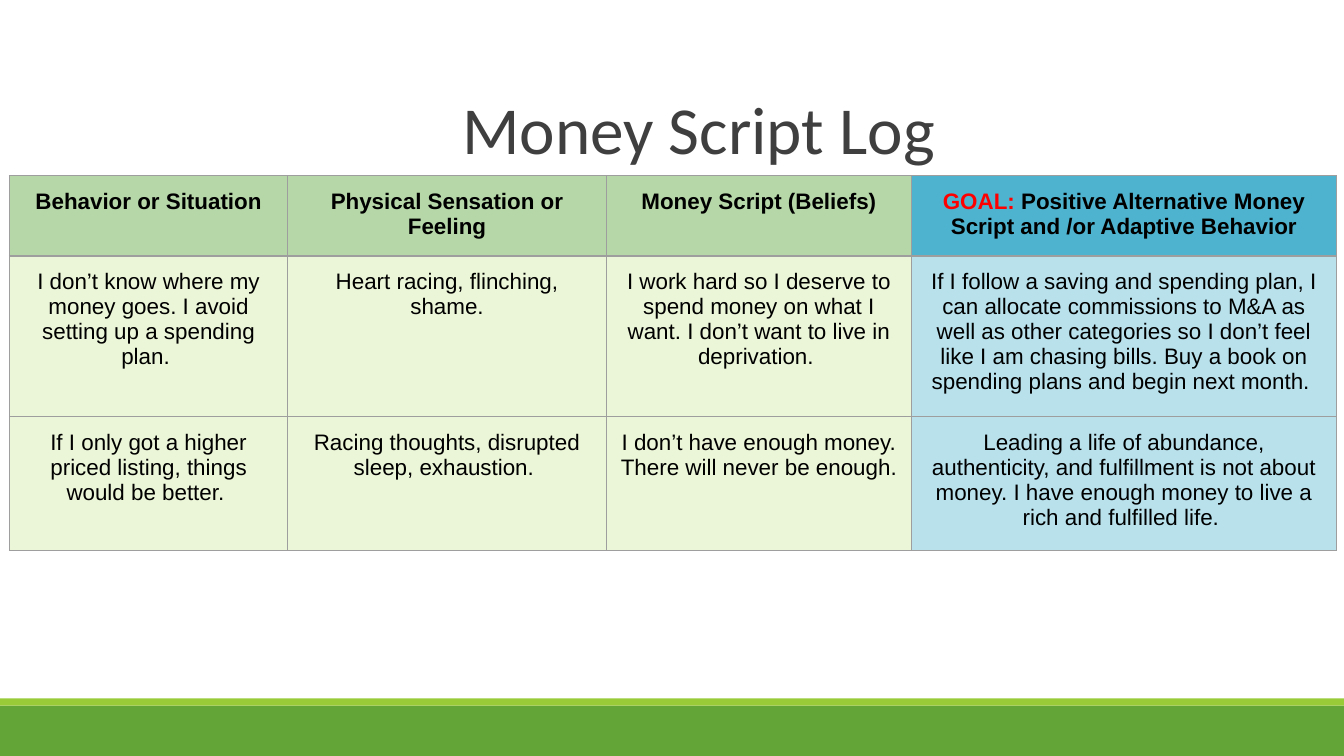
from lxml.etree import SubElement
from pptx import Presentation
from pptx.dml.color import RGBColor
from pptx.enum.shapes import MSO_SHAPE
from pptx.enum.text import MSO_ANCHOR, PP_ALIGN
from pptx.oxml.ns import qn
from pptx.util import Cm, Pt


def rgb(hex_color):
    return RGBColor.from_string(hex_color)


def add_borders(cell, color, width):
    """Draw the same line on all four sides; call before filling the cell."""
    tc_pr = cell._tc.get_or_add_tcPr()
    for side in ("lnL", "lnR", "lnT", "lnB"):
        ln = SubElement(tc_pr, qn(f"a:{side}"), w=str(width))
        SubElement(SubElement(ln, qn("a:solidFill")), qn("a:srgbClr"), val=color)


prs = Presentation()
prs.slide_width, prs.slide_height = Cm(25.4), Cm(14.29)
s = prs.slides.add_slide(prs.slide_layouts[6])

# Footer bands
for top, height, color in ((13.34, 0.95, "63A537"), (13.2, 0.14, "99CB38")):
    sp = s.shapes.add_shape(MSO_SHAPE.RECTANGLE, 0, Cm(top), prs.slide_width, Cm(height))
    sp.shadow.inherit = False
    sp.fill.solid()
    sp.fill.fore_color.rgb = rgb(color)
    sp.line.fill.background()

# Title
INSET = Cm(0.25)
tf = s.shapes.add_textbox(Cm(1.37), Cm(1.63), Cm(23.67), Cm(1.3)).text_frame
tf.word_wrap = True
tf.vertical_anchor = MSO_ANCHOR.TOP
tf.margin_left = tf.margin_right = tf.margin_top = tf.margin_bottom = INSET
p = tf.paragraphs[0]
p.text = "Money Script Log"
p.alignment = PP_ALIGN.CENTER
p.line_spacing = 0.85
p.font.name, p.font.size = "Calibri", Pt(36)
p.font.color.rgb = rgb("3F3F3F")

# Log table: the last column holds the goal and has its own colours
GOAL = "GOAL: "
rows = [
    ["Behavior or Situation",
     "Physical Sensation or Feeling",
     "Money Script (Beliefs)",
     GOAL + "Positive Alternative Money Script and /or Adaptive Behavior"],
    ["I don’t know where my money goes. I avoid setting up a spending plan. ",
     "Heart racing, flinching, shame.",
     "I work hard so I deserve to spend money on what I want. "
     "I don’t want to live in deprivation. ",
     "If I follow a saving and spending plan, I can allocate commissions to M&A "
     "as well as other categories so I don’t feel like I am chasing bills. "
     "Buy a book on spending plans and begin next month. "],
    ["If I only got a higher priced listing, things would be better. ",
     "Racing thoughts, disrupted sleep, exhaustion. ",
     "I don’t have enough money. There will never be enough. ",
     "Leading a life of abundance, authenticity, and fulfillment is not about money. "
     "I have enough money to live a rich and fulfilled life. "],
]
col_widths = [5.26, 6.02, 5.77, 8.03]
row_heights = [1.43, 2.87, 2.4]
header_fills = ["B6D7A8"] * 3 + ["4EB3CF"]
body_fills = ["EBF5D7"] * 3 + ["B8E1EC"]

table = s.shapes.add_table(len(rows), len(col_widths), Cm(0.18), Cm(3.32),
                           Cm(sum(col_widths)), Cm(sum(row_heights))).table
for column, width in zip(table.columns, col_widths):
    column.width = Cm(width)
for row, height in zip(table.rows, row_heights):
    row.height = Cm(height)

for i, texts in enumerate(rows):
    fills = body_fills if i else header_fills
    for j, (text, fill) in enumerate(zip(texts, fills)):
        cell = table.cell(i, j)
        add_borders(cell, "9E9E9E", Pt(0.75))
        cell.fill.solid()
        cell.fill.fore_color.rgb = rgb(fill)
        cell.margin_left = cell.margin_right = INSET
        cell.margin_top = cell.margin_bottom = INSET
        p = cell.text_frame.paragraphs[0]
        p.alignment = PP_ALIGN.CENTER
        p.font.name, p.font.size, p.font.bold = "Arial", Pt(12), i == 0
        p.font.color.rgb = rgb("000000")
        if text.startswith(GOAL):
            r = p.add_run()
            r.text = GOAL
            r.font.color.rgb = rgb("FF0000")
        p.add_run().text = text.removeprefix(GOAL)

prs.save("out.pptx")
